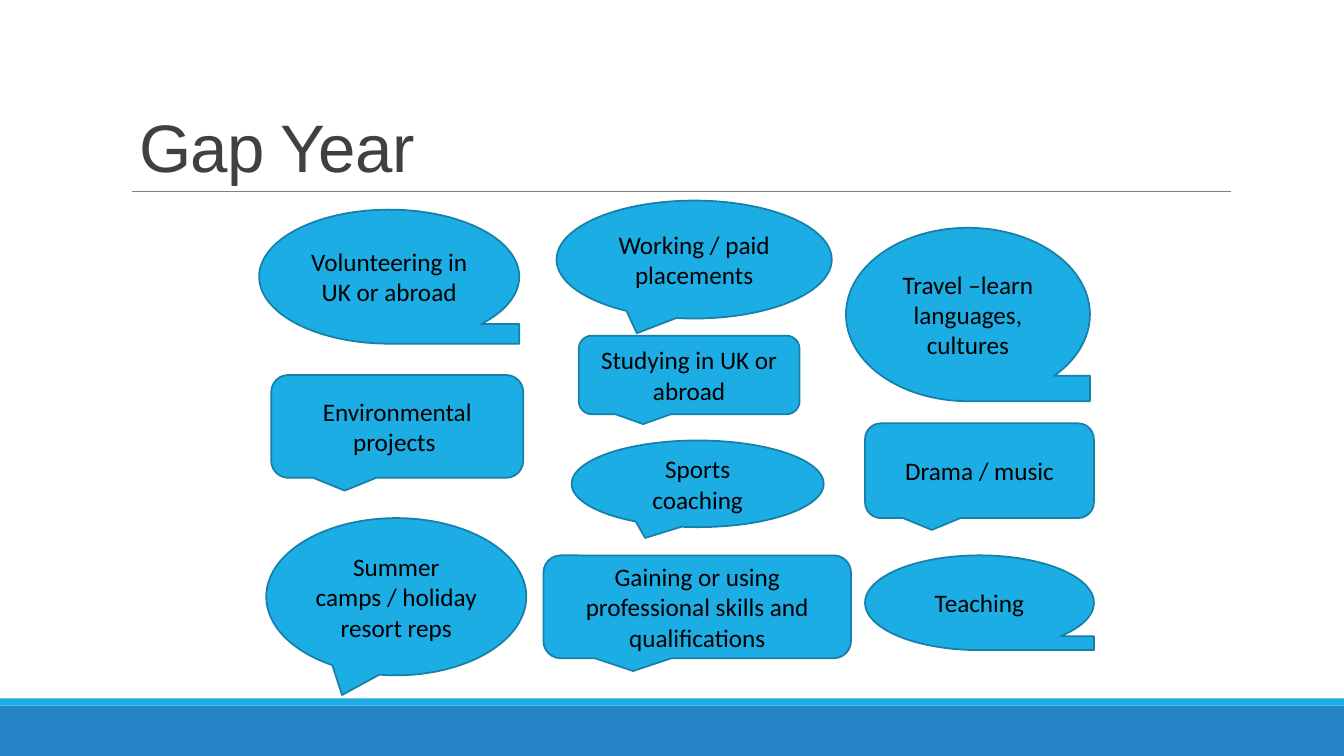
from pptx import Presentation
from pptx.dml.color import RGBColor
from pptx.enum import shapes, text
from pptx.oxml import ns, xmlchemy
from pptx.util import Inches, Pt

COLORS = {
    "sky": "1CADE4", "blue": "2683C6", "edge": "1580A9",
    "rule": "808080", "title": "404040", "ink": "000000",
}
KIND = shapes.MSO_SHAPE
TAPE = KIND.FLOWCHART_SEQUENTIAL_ACCESS_STORAGE
OVAL = KIND.OVAL_CALLOUT
ROUND = KIND.ROUNDED_RECTANGULAR_CALLOUT

# Kind, (left, top, width, height), wording
IDEAS = [
    (TAPE, (2.57, 2.08, 2.58, 1.33), "Volunteering in UK or abroad"),
    (TAPE, (8.39, 2.26, 2.42, 1.72), "Travel –learn languages, cultures"),
    (OVAL, (5.67, 4.37, 2.5, 0.86), "Sports coaching"),
    (ROUND, (2.69, 3.72, 2.5, 1.02), "Environmental projects "),
    (OVAL, (5.52, 1.99, 2.73, 1.17), "Working / paid placements"),
    (ROUND, (5.74, 3.33, 2.19, 0.78), "Studying in UK or abroad"),
    (TAPE, (8.58, 5.51, 2.27, 0.94), "Teaching"),
    (OVAL, (2.64, 5.14, 2.58, 1.56), "Summer camps / holiday resort reps"),
    (ROUND, (5.39, 5.51, 3.05, 1.02),
     "Gaining or using professional skills and qualifications"),
    (ROUND, (8.58, 4.2, 2.27, 0.94), "Drama / music"),
]


def color(name):
    return RGBColor.from_string(COLORS[name])


def add_run(para, words, face, size, ink):
    run = para.add_run()
    run.text = words
    run.font.name = face
    run.font.size = Pt(size)
    run.font.color.rgb = color(ink)
    return run


def add_shape(slide, kind, box, fill, edge=None):
    shape = slide.shapes.add_shape(kind, *map(Inches, box))
    shape.shadow.inherit = False
    shape.fill.solid()
    shape.fill.fore_color.rgb = color(fill)
    if edge:
        shape.line.color.rgb = color(edge)
        shape.line.width = Pt(1.25)
    else:
        shape.line.fill.background()
    return shape


def add_rule(slide, left, right, top):
    rule = slide.shapes.add_connector(
        shapes.MSO_CONNECTOR.STRAIGHT,
        Inches(left), Inches(top), Inches(right), Inches(top))
    rule.line.color.rgb = color("rule")
    rule.line.width = Pt(0.5)
    props = rule.element.find(ns.qn("p:spPr"))
    props.append(xmlchemy.OxmlElement("a:effectLst"))


def set_title(slide, words):
    title = slide.shapes.title
    title.left, title.top = Inches(1.28), Inches(0.99)
    title.width, title.height = Inches(9.53), Inches(0.91)
    frame = title.text_frame
    frame.auto_size = text.MSO_AUTO_SIZE.NONE
    frame.vertical_anchor = text.MSO_ANCHOR.BOTTOM
    para = frame.paragraphs[0]
    para.alignment = text.PP_ALIGN.LEFT
    para.line_spacing = 0.85
    run = add_run(para, words, "Arial", 48, "title")
    run.font._element.set("spc", "-50")


def add_idea(slide, kind, box, words):
    shape = add_shape(slide, kind, box, "sky", "edge")
    frame = shape.text_frame
    frame.word_wrap = True
    frame.vertical_anchor = text.MSO_ANCHOR.MIDDLE
    para = frame.paragraphs[0]
    para.alignment = text.PP_ALIGN.CENTER
    add_run(para, words, "Calibri", 18, "ink")


def main():
    deck = Presentation()
    deck.slide_width, deck.slide_height = Inches(13.33), Inches(7.5)
    slide = deck.slides.add_slide(deck.slide_layouts.get_by_name("Title Only"))

    # Footer bands and title rule
    add_shape(slide, KIND.RECTANGLE, (0, 7, 13.33, 0.5), "blue")
    add_shape(slide, KIND.RECTANGLE, (0, 6.93, 13.33, 0.07), "sky")
    add_rule(slide, 1.31, 12.21, 1.9)

    # Title
    set_title(slide, "Gap Year")

    # Gap year ideas
    for kind, box, words in IDEAS:
        add_idea(slide, kind, box, words)

    deck.save("out.pptx")


if __name__ == "__main__":
    main()
